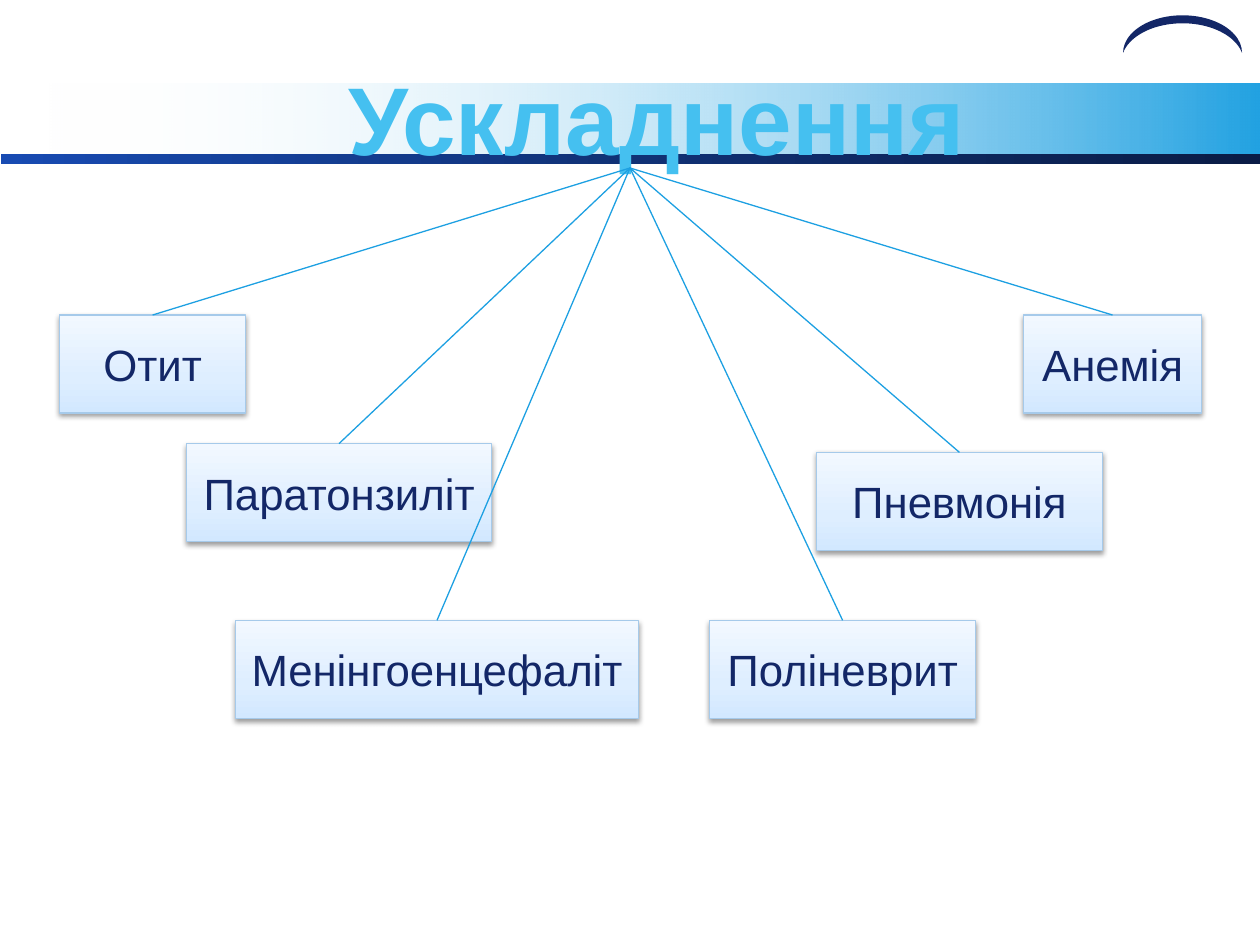
"""Build a slide that fans the complications out from its title."""
from dataclasses import dataclass
from typing import Any, NamedTuple

from lxml import etree
from pptx import Presentation
from pptx.dml.color import RGBColor
from pptx.enum.shapes import MSO_CONNECTOR, MSO_SHAPE
from pptx.enum.text import MSO_ANCHOR, PP_ALIGN
from pptx.oxml.ns import qn
from pptx.util import Pt

RECTANGLE = MSO_SHAPE.RECTANGLE
MOON = MSO_SHAPE.MOON
STRAIGHT = MSO_CONNECTOR.STRAIGHT
MIDDLE = MSO_ANCHOR.MIDDLE
LEFT = PP_ALIGN.LEFT
CENTER = PP_ALIGN.CENTER
TOP_SITE = 0


class Stop(NamedTuple):
    percent: int
    color: str
    opacity: int = 100


class Gradient(NamedTuple):
    angle: int
    stops: tuple[Stop, ...]


class Frame(NamedTuple):
    left: float
    top: float
    width: float
    height: float

    def lengths(self) -> tuple[Pt, ...]:
        return tuple(Pt(value) for value in self)


class Complication(NamedTuple):
    label: str
    left: float
    top: float
    width: float


@dataclass(frozen=True)
class Theme:
    font: str = "Arial"
    title_size: float = 55
    label_size: float = 25
    line_width: float = 0.75
    navy: str = "132767"
    border: str = "A6CAEA"
    ray: str = "1DA0E2"
    shadow: str = "000000"
    band: Gradient = Gradient(0, (Stop(0, "FFFFFF", 0), Stop(100, "22A2E2")))
    rule: Gradient = Gradient(
        0, (Stop(0, "184BB2"), Stop(50, "103175"), Stop(100, "0A1C46")))
    title: Gradient = Gradient(
        270, (Stop(0, "A6E4FF"), Stop(75, "45C0F0"), Stop(100, "29B3E5")))
    card: Gradient = Gradient(
        90, (Stop(0, "D2E8FF"), Stop(35, "DEEEFF"), Stop(100, "F2F8FF")))


THEME = Theme()
SLIDE_SIZE = (720, 540)
BAND = Frame(24, 48, 696, 42)
RULE = Frame(0.5, 88, 719.5, 6)
ARC = Frame(665, -14.5, 21.5, 68)
TITLE = Frame(192, 48, 492, 38)
HUB = (360, 96)
CARD_HEIGHT = 56
COMPLICATIONS = (
    Complication("Отит", 34, 180, 106.5),
    Complication("Паратонзиліт", 106.5, 253.5, 174.5),
    Complication("Пневмонія", 466.5, 258.5, 163.5),
    Complication("Анемія", 585, 180, 101.5),
    Complication("Менінгоенцефаліт", 134.5, 354.5, 230.5),
    Complication("Поліневрит", 405.5, 354.5, 152),
)


def add_color(parent: Any, color: str, opacity: int = 100) -> None:
    """Append an RGB colour element, with alpha when it is not opaque."""
    element = etree.SubElement(parent, qn("a:srgbClr"), val=color)
    if opacity < 100:
        etree.SubElement(element, qn("a:alpha"), val=str(opacity * 1000))


def apply_gradient(fill: Any, owner: Any, gradient: Gradient) -> None:
    """Give a fill the stops and the angle of a gradient."""
    fill.gradient()
    fill.gradient_angle = gradient.angle
    stop_list = next(owner.iter(qn("a:gsLst")))
    for default_stop in list(stop_list):
        stop_list.remove(default_stop)
    for stop in gradient.stops:
        element = etree.SubElement(
            stop_list, qn("a:gs"), pos=str(stop.percent * 1000))
        add_color(element, stop.color, stop.opacity)


def add_plain(slide: Any, preset: Any, frame: Frame) -> Any:
    """Add a preset shape without outline or shadow."""
    shape = slide.shapes.add_shape(preset, *frame.lengths())
    shape.shadow.inherit = False
    shape.line.fill.background()
    return shape


def write(shape: Any, text: str, size: float, alignment: Any) -> Any:
    """Set one line of vertically centred text and return its run."""
    shape.text_frame.text = text
    shape.text_frame.word_wrap = True
    shape.text_frame.vertical_anchor = MIDDLE
    paragraph = shape.text_frame.paragraphs[0]
    paragraph.alignment = alignment
    run = paragraph.runs[0]
    run.font.name = THEME.font
    run.font.size = Pt(size)
    return run


def add_header(slide: Any) -> None:
    """Draw the gradient bars, the arc and the title."""
    for frame, gradient in ((BAND, THEME.band), (RULE, THEME.rule)):
        bar = add_plain(slide, RECTANGLE, frame)
        apply_gradient(bar.fill, bar._element, gradient)
    arc = add_plain(slide, MOON, ARC)
    arc.rotation = 90
    arc.adjustments[0] = 0.212
    arc.fill.solid()
    arc.fill.fore_color.rgb = RGBColor.from_string(THEME.navy)
    title = slide.shapes.add_textbox(*TITLE.lengths())
    run = write(title, "Ускладнення", THEME.title_size, LEFT)
    run.font.bold = True
    apply_gradient(run.font.fill, run._r, THEME.title)


def add_card(slide: Any, item: Complication) -> Any:
    """Draw one complication as a shaded card."""
    frame = Frame(item.left, item.top, item.width, CARD_HEIGHT)
    card = add_plain(slide, RECTANGLE, frame)
    apply_gradient(card.fill, card._element, THEME.card)
    card.line.color.rgb = RGBColor.from_string(THEME.border)
    card.line.width = Pt(THEME.line_width)
    effects = card._element.spPr.find(qn("a:effectLst"))
    shadow = etree.SubElement(
        effects, qn("a:outerShdw"), blurRad=str(Pt(3.1)), dist=str(Pt(1.6)),
        dir="5400000", rotWithShape="0")
    add_color(shadow, THEME.shadow, 38)
    run = write(card, item.label, THEME.label_size, CENTER)
    run.font.color.rgb = RGBColor.from_string(THEME.navy)
    return card


def add_ray(slide: Any, card: Any) -> None:
    """Join the hub under the title to the top of a card."""
    hub = [Pt(value) for value in HUB]
    ray = slide.shapes.add_connector(STRAIGHT, *hub, *hub)
    ray.end_connect(card, TOP_SITE)
    ray.line.color.rgb = RGBColor.from_string(THEME.ray)
    ray.line.width = Pt(THEME.line_width)
    etree.SubElement(ray._element.spPr, qn("a:effectLst"))


def main() -> None:
    """Assemble and save the slide."""
    deck = Presentation()
    deck.slide_width, deck.slide_height = (Pt(side) for side in SLIDE_SIZE)
    slide = deck.slides.add_slide(deck.slide_layouts[6])
    add_header(slide)
    cards = [add_card(slide, item) for item in COMPLICATIONS]
    for card in cards:
        add_ray(slide, card)
    deck.save("out.pptx")


if __name__ == "__main__":
    main()
